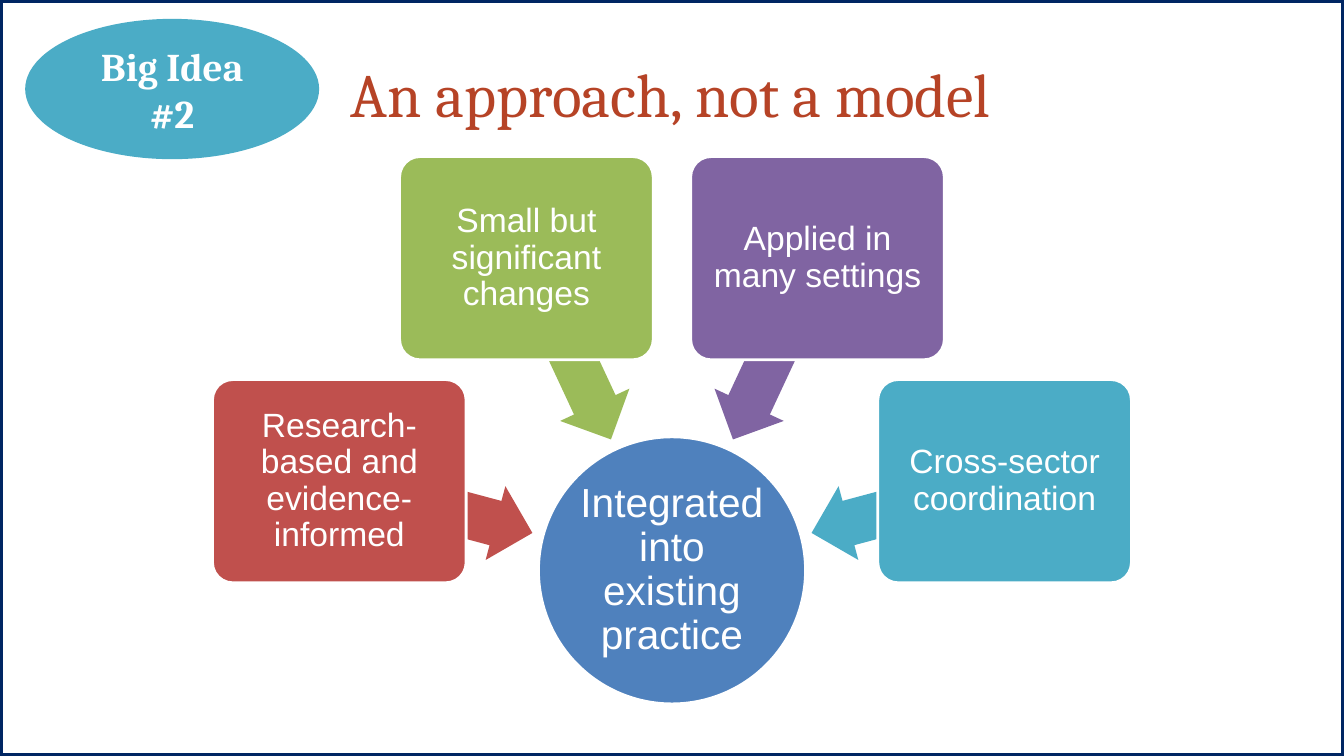
from math import cos, radians, sin

from pptx import Presentation
from pptx.dml.color import RGBColor
from pptx.enum.shapes import MSO_SHAPE as SHAPE
from pptx.enum.text import MSO_ANCHOR, MSO_AUTO_SIZE, PP_ALIGN
from pptx.util import Inches, Pt

# The slide is a grid of 160 by 90 square cells
COLS, ROWS = 160, 90
CELL = Inches(1 / 12)

NAVY, WHITE, RUST = "002663", "FFFFFF", "B64326"
BLUE, RED, GREEN, PURPLE, AQUA = "4F81BD", "C0504D", "9BBB59", "8064A2", "4BACC6"

HUB = (80, 67.9)
ARROW_RADIUS, BOX_RADIUS = 29.1, 41
FIRST_ANGLE, ANGLE_STEP = 195, 50
FACTORS = [
    ("Research-based and evidence-informed", RED),
    ("Small but significant changes", GREEN),
    ("Applied in many settings", PURPLE),
    ("Cross-sector coordination", AQUA),
]


def rgb(color):
    return RGBColor.from_string(color)


def around_hub(radius, angle):
    """Return the grid point at a clockwise angle and distance from the hub."""
    x, y = HUB
    return x + radius * cos(radians(angle)), y + radius * sin(radians(angle))


class Deck:
    heading_font, body_font = "Cambria", "Arial"

    def __init__(self):
        self.prs = Presentation()
        self.prs.slide_width, self.prs.slide_height = COLS * CELL, ROWS * CELL
        self.slide = self.prs.slides.add_slide(self.prs.slide_layouts[5])

    def box(self, center, size):
        """Turn a centre and size in cells into left, top, width, height."""
        (x, y), (w, h) = center, size
        return [round(v * CELL) for v in (x - w / 2, y - h / 2, w, h)]

    def shape(self, kind, center, size, fill=None, line=None, weight=2):
        sp = self.slide.shapes.add_shape(kind, *self.box(center, size))
        sp.shadow.inherit = False
        if fill:
            sp.fill.solid()
            sp.fill.fore_color.rgb = rgb(fill)
        else:
            sp.fill.background()
        if line:
            sp.line.color.rgb = rgb(line)
            sp.line.width = Pt(weight)
        else:
            sp.line.fill.background()
        return sp

    def text(self, sp, text, size, font, color=WHITE, bold=False, inset=None, spacing=None):
        tf = sp.text_frame
        tf.text = text
        tf.word_wrap = True
        tf.auto_size = MSO_AUTO_SIZE.NONE
        tf.vertical_anchor = MSO_ANCHOR.MIDDLE
        if inset is not None:
            tf.margin_left = tf.margin_right = Inches(inset)
            tf.margin_top = tf.margin_bottom = Inches(inset)
        p = tf.paragraphs[0]
        p.alignment = PP_ALIGN.CENTER
        if spacing:
            p.line_spacing = spacing
        r = p.runs[0]
        r.font.name, r.font.size, r.font.bold = font, Pt(size), bold
        r.font.color.rgb = rgb(color)

    def border(self):
        self.shape(SHAPE.RECTANGLE, (COLS / 2, ROWS / 2), (COLS, ROWS),
                   line=NAVY, weight=4.5)

    def title(self, text):
        sp = self.slide.shapes.title
        sp.left, sp.top, sp.width, sp.height = self.box((79.9, 11.1), (157.4, 15))
        self.text(sp, text, 44, self.heading_font, RUST)

    def badge(self, text):
        sp = self.shape(SHAPE.OVAL, (20.5, 10.6), (35, 16.7), AQUA)
        self.text(sp, text, 28, self.heading_font, bold=True)

    def hub(self, text):
        sp = self.shape(SHAPE.OVAL, HUB, (31.8, 31.8), BLUE, WHITE)
        self.text(sp, text, 29, self.body_font, inset=0.02, spacing=0.9)

    def factor(self, text, color, angle):
        """Draw a box at an angle from the hub, with an arrow behind it."""
        arrow = self.shape(SHAPE.LEFT_ARROW, around_hub(ARROW_RADIUS, angle),
                           (23.8, 9.1), color)
        # The arrow points left when unturned, so its tip faces the hub
        arrow.rotation = angle
        arrow.adjustments[0], arrow.adjustments[1] = 0.6, 0.5
        sp = self.shape(SHAPE.ROUNDED_RECTANGLE, around_hub(BOX_RADIUS, angle),
                        (30.2, 24.2), color, WHITE)
        sp.adjustments[0] = 0.1
        self.text(sp, text, 24, self.body_font, inset=0.05, spacing=0.9)


def main():
    deck = Deck()
    deck.border()
    deck.title("An approach, not a model")
    deck.hub("Integrated into existing practice")
    for i, (text, color) in enumerate(FACTORS):
        deck.factor(text, color, FIRST_ANGLE + i * ANGLE_STEP)
    deck.badge("Big Idea #2")
    deck.prs.save("out.pptx")


if __name__ == "__main__":
    main()
